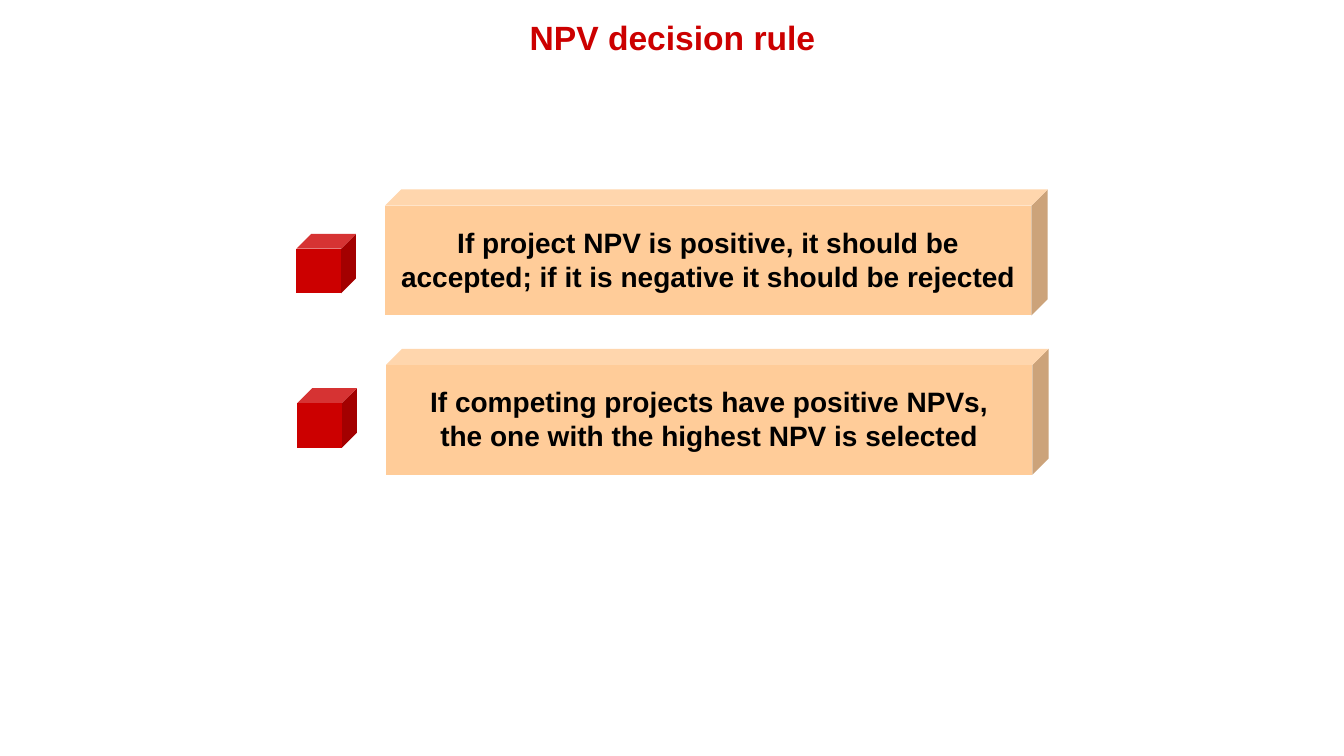
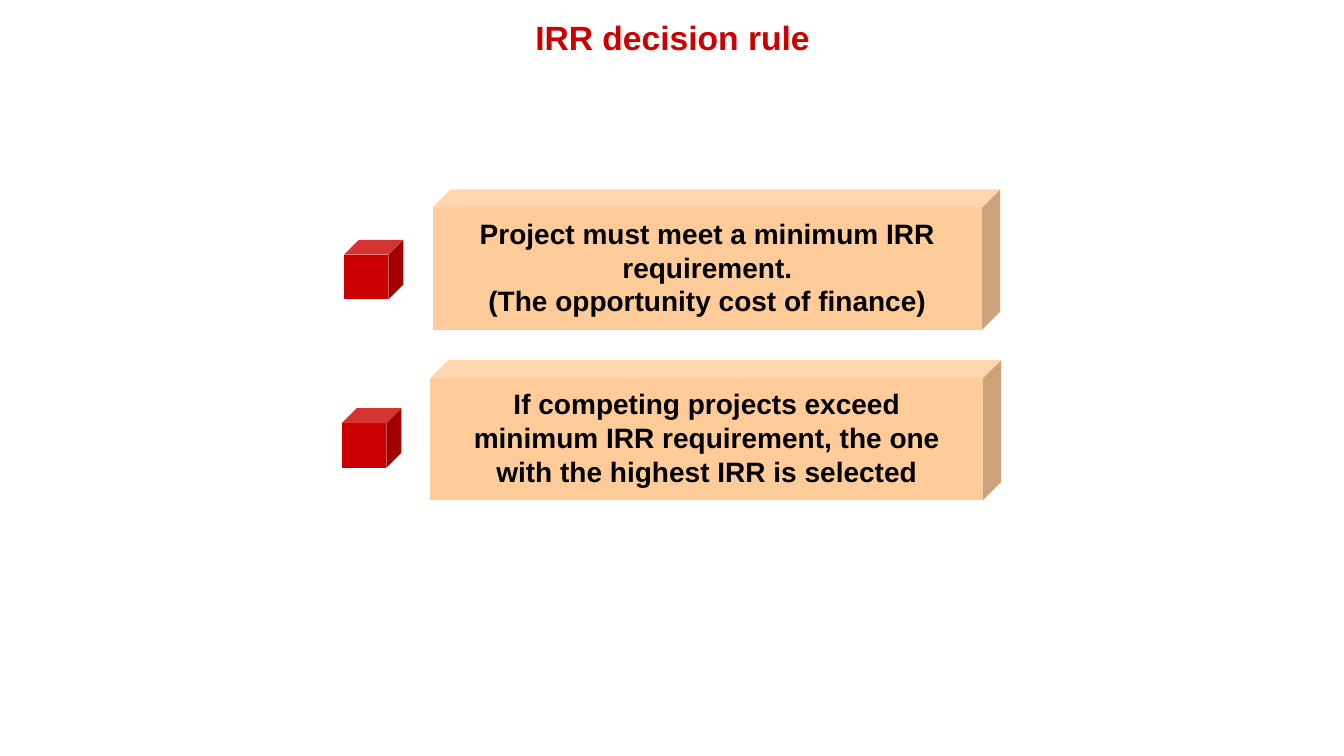
import pptx
import pptx.util
from pptx.dml.color import RGBColor
from pptx.enum.shapes import MSO_SHAPE
from pptx.enum.text import MSO_ANCHOR, PP_ALIGN

Inches = pptx.util.Inches

RED, PEACH, BLACK = "CC0000", "FFCC99", "000000"
WIDE, HIGH = 13.33, 7.5
TITLE_BOX = (2.27, 0.12, 8.8, 0.5)
CUBE, CUBE_GAP = 0.59, 0.88  # marker size, and its offset left of the bar
BAR_DEPTH, CUBE_DEPTH = 0.128, 0.25
TITLE_FONT = {"name": "Arial", "size": pptx.util.Pt(24), "bold": True}
RULE_FONT = {**TITLE_FONT, "size": pptx.util.Pt(20)}

# Each rule: wording, bar box, width of the text, top of the marker
SLIDES = [
    ("NPV decision rule", [
        ("If project NPV is positive, it should be accepted; "
         "if it is negative it should be rejected",
         (3.82, 1.88, 6.57, 1.25), 6.16, 2.32),
        ("If competing projects have positive NPVs, "
         "the one with the highest NPV is selected",
         (3.83, 3.46, 6.57, 1.25), 5.82, 3.85),
    ]),
    ("IRR decision rule", [
        ("Project must meet a minimum IRR requirement.\v"
         "(The opportunity cost of finance)",
         (4.29, 1.88, 5.63, 1.39), 5.02, 2.38),
        ("If competing projects exceed minimum IRR requirement, "
         "the one with the highest IRR is selected",
         (4.27, 3.57, 5.66, 1.39), 4.96, 4.05),
    ]),
]


def rgb(code):
    return RGBColor.from_string(code)


def assign(item, values):
    for key, value in values.items():
        setattr(item, key, value)


def write(frame, text, font, color):
    frame.text = text
    frame.word_wrap = True
    frame.vertical_anchor = MSO_ANCHOR.MIDDLE
    para = frame.paragraphs[0]
    para.alignment = PP_ALIGN.CENTER
    for run in para.runs:
        assign(run.font, font)
        run.font.color.rgb = rgb(color)


def add_cube(slide, box, depth, color):
    cube = slide.shapes.add_shape(MSO_SHAPE.CUBE, *map(Inches, box))
    cube.adjustments[0] = depth
    cube.shadow.inherit = False
    cube.fill.solid()
    cube.fill.fore_color.rgb = rgb(color)
    cube.line.fill.background()
    return cube


def add_rule(slide, text, box, width, top):
    left, _, wide, high = box
    bar = add_cube(slide, box, BAR_DEPTH, PEACH)
    side = Inches((wide - BAR_DEPTH * high - width) / 2)
    assign(bar.text_frame, {"margin_left": side, "margin_right": side,
                            "margin_top": Inches(0.05),
                            "margin_bottom": Inches(0.08)})
    write(bar.text_frame, text, RULE_FONT, BLACK)
    add_cube(slide, (left - CUBE_GAP, top, CUBE, CUBE), CUBE_DEPTH, RED)


def main():
    deck = pptx.Presentation()
    deck.slide_width, deck.slide_height = Inches(WIDE), Inches(HIGH)
    layout = deck.slide_layouts.get_by_name("Title Only")
    spots = ("left", "top", "width", "height")
    assign(layout.placeholders[0], dict(zip(spots, map(Inches, TITLE_BOX))))
    for title, rules in SLIDES:
        slide = deck.slides.add_slide(layout)
        write(slide.shapes.title.text_frame, title, TITLE_FONT, RED)
        for rule in rules:
            add_rule(slide, *rule)
    deck.save("out.pptx")


if __name__ == "__main__":
    main()
